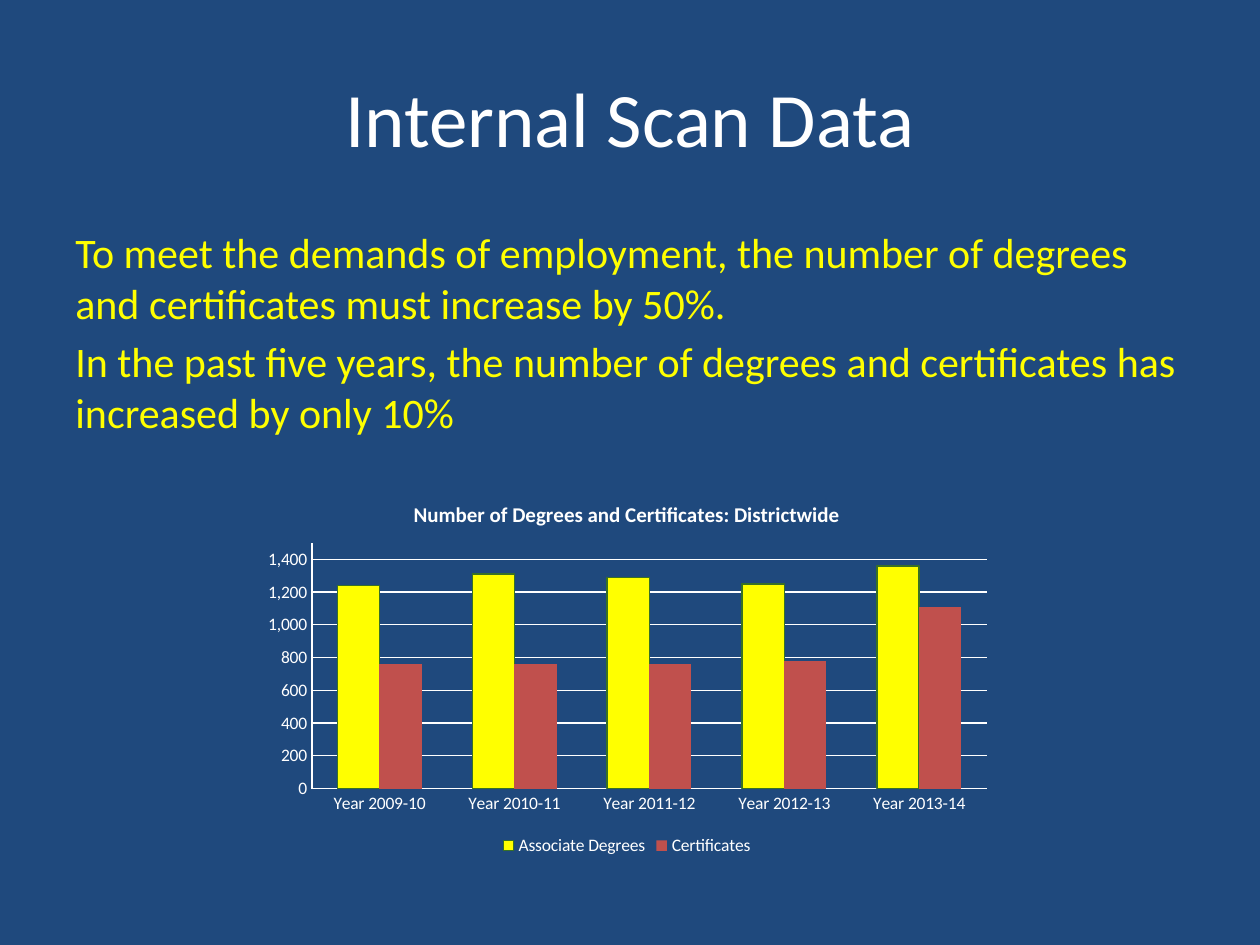
from lxml import etree
from pptx import Presentation
from pptx.chart.data import CategoryChartData
from pptx.dml.color import RGBColor
from pptx.enum.chart import XL_CHART_TYPE, XL_LEGEND_POSITION, XL_TICK_MARK
from pptx.enum.text import MSO_ANCHOR, PP_ALIGN
from pptx.oxml.ns import qn
from pptx.util import Inches, Pt

COLUMNS = XL_CHART_TYPE.COLUMN_CLUSTERED
BOTTOM = XL_LEGEND_POSITION.BOTTOM
NO_TICKS = XL_TICK_MARK.NONE
CENTER, LEFT = PP_ALIGN.CENTER, PP_ALIGN.LEFT
MIDDLE, TOP = MSO_ANCHOR.MIDDLE, MSO_ANCHOR.TOP

FONT = "Calibri"
COLORS = {
    "background": "1F497D",
    "white": "FFFFFF",
    "yellow": "FFFF00",
    "red": "C0504D",
    "green": "387026",
}

STATEMENTS = [
    "To meet the demands of employment, the number of degrees "
    "and certificates must increase by 50%.",
    "In the past five years, the number of degrees and certificates has "
    "increased by only 10%",
]
YEARS = [f"Year {year}-{year - 1999}" for year in range(2009, 2014)]
YEARS = [label.replace("-", "-0") if len(label) < 12 else label for label in YEARS]
AWARDS = {
    "Associate Degrees": ([1240, 1310, 1290, 1250, 1360], "yellow"),
    "Certificates": ([760, 760, 760, 780, 1110], "red"),
}


def rgb(name):
    return RGBColor.from_string(COLORS[name])


def set_font(font, size, color, bold=False):
    font.name = FONT
    font.size = Pt(size)
    font.bold = bold
    font.color.rgb = rgb(color)


def add_text(slide, paragraphs, left, top, width, height, *, size, color,
             align=LEFT, anchor=TOP, space_before=0):
    box = slide.shapes.add_textbox(Inches(left), Inches(top), Inches(width), Inches(height))
    frame = box.text_frame
    frame.word_wrap = True
    frame.vertical_anchor = anchor
    for index, text in enumerate(paragraphs):
        paragraph = frame.paragraphs[0] if index == 0 else frame.add_paragraph()
        paragraph.alignment = align
        paragraph.space_before = Pt(space_before)
        run = paragraph.add_run()
        run.text = text
        set_font(run.font, size, color)


def place_plot(chart, **fractions):
    """Fix the inner plot area as fractions of the chart frame."""
    plot_area = chart._chartSpace.chart.plotArea
    for old in plot_area.findall(qn("c:layout")):
        plot_area.remove(old)
    layout = etree.Element(qn("c:layout"))
    manual = etree.SubElement(layout, qn("c:manualLayout"))
    settings = {"layoutTarget": "inner", "xMode": "edge", "yMode": "edge", **fractions}
    for tag, value in settings.items():
        etree.SubElement(manual, qn(f"c:{tag}")).set("val", str(value))
    plot_area.insert(0, layout)


def style_axes(chart):
    for axis in (chart.category_axis, chart.value_axis):
        axis.major_tick_mark = axis.minor_tick_mark = NO_TICKS
        axis.format.line.color.rgb = rgb("white")
        axis.format.line.width = Pt(0.75)
        set_font(axis.tick_labels.font, 10, "white")
    counts = chart.value_axis
    counts.minimum_scale, counts.maximum_scale, counts.major_unit = 0, 1500, 200
    counts.tick_labels.number_format = "#,##0"
    counts.tick_labels.number_format_is_linked = False
    counts.has_major_gridlines = True
    counts.major_gridlines.format.line.color.rgb = rgb("white")
    counts.major_gridlines.format.line.width = Pt(0.75)


def add_awards_chart(slide, left, top, width, height):
    data = CategoryChartData(number_format="#,##0")
    data.categories = YEARS
    for name, (values, _) in AWARDS.items():
        data.add_series(name, values)
    chart = slide.shapes.add_chart(
        COLUMNS, Inches(left), Inches(top), Inches(width), Inches(height), data).chart
    set_font(chart.font, 10, "white")

    chart.has_title = True
    heading = chart.chart_title.text_frame.paragraphs[0].add_run()
    heading.text = "Number of Degrees and Certificates: Districtwide"
    set_font(heading.font, 12, "white", bold=True)
    chart.chart_title.include_in_layout = False

    chart.has_legend = True
    chart.legend.position = BOTTOM
    chart.legend.include_in_layout = False
    set_font(chart.legend.font, 10, "white")

    style_axes(chart)
    plot = chart.plots[0]
    plot.gap_width, plot.overlap = 120, 0
    plot.vary_by_categories = False
    for series, (_, color) in zip(plot.series, AWARDS.values()):
        series.invert_if_negative = False
        series.format.fill.solid()
        series.format.fill.fore_color.rgb = rgb(color)
    degrees_outline = plot.series[0].format.line
    degrees_outline.color.rgb = rgb("green")
    degrees_outline.width = Pt(0.75)
    place_plot(chart, x=0.08, y=0.16, w=0.9, h=0.65)


def main():
    deck = Presentation()
    deck.slide_width, deck.slide_height = Inches(10), Inches(7.5)
    slide = deck.slides.add_slide(deck.slide_layouts[6])
    slide.background.fill.solid()
    slide.background.fill.fore_color.rgb = rgb("background")

    add_text(slide, ["Internal Scan Data"], 0.5, 0.3, 9, 1.25,
             size=44, color="white", align=CENTER, anchor=MIDDLE)
    add_text(slide, STATEMENTS, 0.5, 1.75, 9, 4.95,
             size=24, color="yellow", space_before=4.8)
    add_awards_chart(slide, 2, 3.83, 5.95, 3)
    deck.save("out.pptx")


if __name__ == "__main__":
    main()
